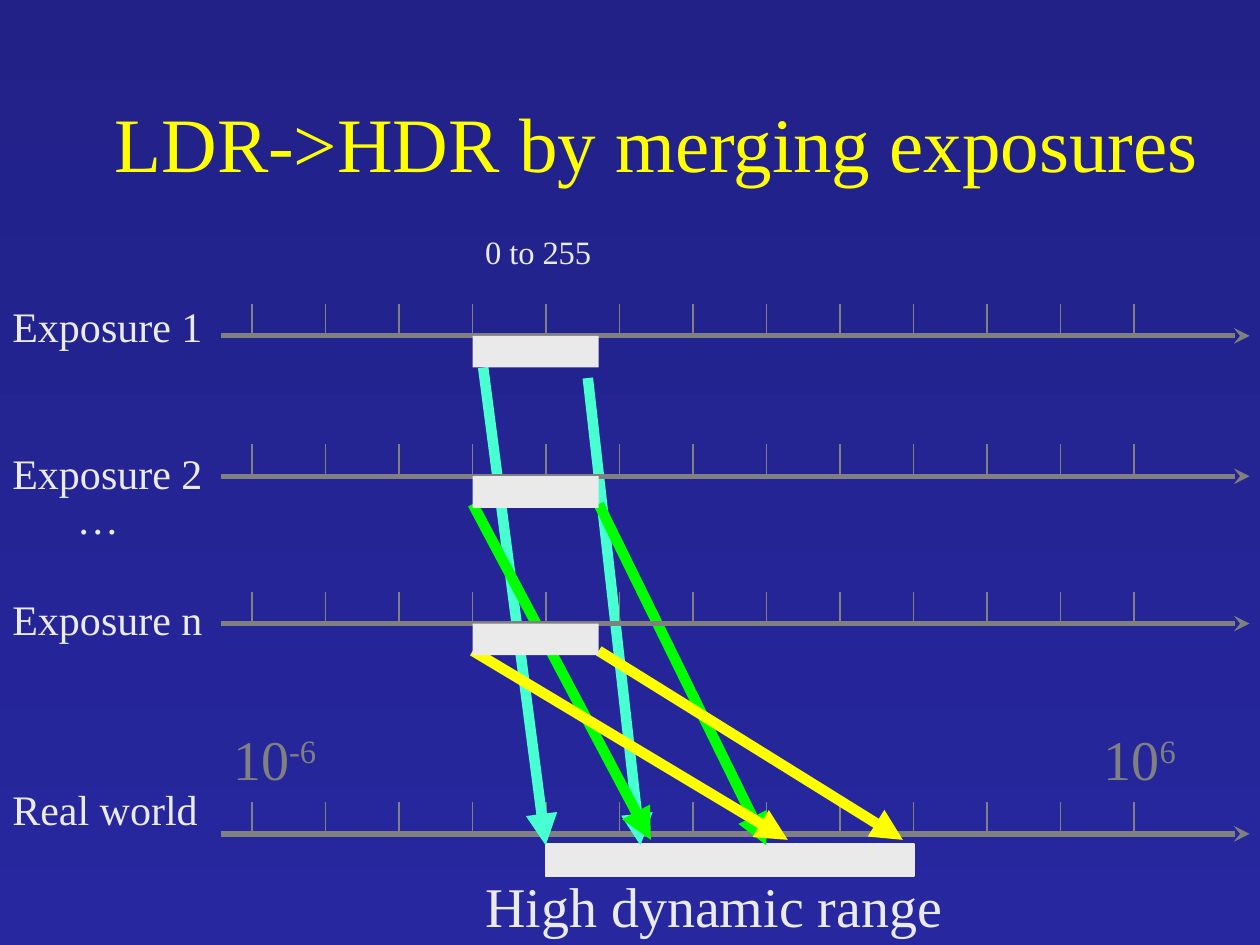
from lxml import etree
from pptx import Presentation
from pptx import util as u
from pptx.dml import color
from pptx.enum import shapes, text
from pptx.oxml import ns

GREY, LIGHT, YELLOW = "808080", "EAEAEA", "FFFF00"
CYAN, GREEN = "47FFD1", "00FF00"
TICK_COUNT, TICK_HEIGHT = 13, 0.64
TICK_FIRST, TICK_LAST = 5.08, 22.86
AXIS_LEFT, AXIS_RIGHT = 4.45, 25.19
RANGE_LEFT, RANGE_WIDTH, RANGE_HEIGHT = 9.53, 2.54, 0.64
WORLD_Y = 16.81


def rgb(value):
    return color.RGBColor.from_string(value)


def add_xml(parent, tag, **attributes):
    return etree.SubElement(parent, ns.qn(tag), attributes)


class Canvas:
    """Holds the text style and the current slide; all lengths are in cm."""

    font_name = "Times New Roman"

    def __init__(self, presentation):
        self.slide = presentation.slides.add_slide(presentation.slide_layouts[6])

    def background(self, top, bottom):
        fill = self.slide.background.fill
        fill.gradient()
        fill.gradient_angle = 270
        for stop, value, position in zip(fill.gradient_stops, (top, bottom), (0, 1)):
            stop.color.rgb = rgb(value)
            stop.position = position

    def text(self, box, parts, size, hex_color=LIGHT, **options):
        """Add one paragraph; each part is (wording, is_superscript)."""
        shape = self.slide.shapes.add_textbox(*map(u.Cm, box))
        formats = {
            "word_wrap": False,
            "auto_size": text.MSO_AUTO_SIZE.NONE,
            "vertical_anchor": text.MSO_ANCHOR.BOTTOM,
            **options,
        }
        for name, value in formats.items():
            setattr(shape.text_frame, name, value)
        paragraph = shape.text_frame.paragraphs[0]
        for wording, superscript in parts:
            run = paragraph.add_run()
            run.text = wording
            for name, value in {"size": u.Pt(size), "name": self.font_name}.items():
                setattr(run.font, name, value)
            run.font.color.rgb = rgb(hex_color)
            if superscript:
                run._r.get_or_add_rPr().set("baseline", "30000")
        return paragraph

    def title(self, box, wording):
        paragraph = self.text(box, [(wording, False)], 44, YELLOW, word_wrap=True,
                              vertical_anchor=text.MSO_ANCHOR.MIDDLE)
        paragraph.alignment = text.PP_ALIGN.CENTER
        properties = paragraph.runs[0]._r.get_or_add_rPr()
        effects = etree.Element(ns.qn("a:effectLst"))
        shadow = add_xml(effects, "a:outerShdw", dist="38100", dir="2700000")
        add_xml(shadow, "a:srgbClr", val="000000")
        properties.find(ns.qn("a:solidFill")).addnext(effects)

    def line(self, start, end, hex_color, width, head=None):
        connector = self.slide.shapes.add_connector(
            shapes.MSO_CONNECTOR.STRAIGHT, *map(u.Cm, (*start, *end)))
        connector.line.color.rgb = rgb(hex_color)
        connector.line.width = u.Pt(width)
        if head:
            add_xml(connector.get_or_add_ln(), "a:tailEnd", type=head)
        add_xml(connector._element.spPr, "a:effectLst")

    def bar(self, box, outlined=False):
        shape = self.slide.shapes.add_shape(
            shapes.MSO_SHAPE.RECTANGLE, *map(u.Cm, box))
        shape.shadow.inherit = False
        shape.fill.solid()
        shape.fill.fore_color.rgb = rgb(LIGHT)
        if outlined:
            shape.line.color.rgb = rgb(LIGHT)
            shape.line.width = u.Pt(1)
        else:
            shape.line.fill.background()

    def axis(self, y):
        step = (TICK_LAST - TICK_FIRST) / (TICK_COUNT - 1)
        for index in range(TICK_COUNT):
            x = TICK_FIRST + index * step
            self.line((x, y - TICK_HEIGHT), (x, y), GREY, 1)
        self.line((AXIS_LEFT, y), (AXIS_RIGHT, y), GREY, 3, "stealth")


def main():
    presentation = Presentation()
    presentation.slide_width, presentation.slide_height = u.Cm(25.4), u.Cm(19.05)
    canvas = Canvas(presentation)
    canvas.background("212188", "27279F")
    canvas.title((1.91, 1.27, 22.66, 3.18), "LDR->HDR by merging exposures")

    canvas.axis(WORLD_Y)
    for left, width, exponent in ((4.45, 2.26, "-6"), (22, 2.01, "6")):
        canvas.text((left, 14.48, width, 1.6), [("10", False), (exponent, True)], 32, GREY)
    canvas.text((0, 15.67, 4.24, 1.27), [("Real world", False)], 24)
    canvas.bar((11, 17.02, 7.42, RANGE_HEIGHT), outlined=True)
    canvas.text((9.53, 17.45, 9.73, 1.6), [("High dynamic range", False)], 32)
    canvas.text((9.53, 4.88, 2.95, 1.14), [("0 to 255", True)], 32)

    # Label, axis height, label top, arrow colour, arrows as (start, end)
    exposures = (
        ("Exposure 1", 6.77, 5.92, CYAN,
         (((11.85, 7.62), (12.91, 17.04)), ((9.74, 7.41), (11, 17.04)))),
        ("Exposure 2", 9.6, 8.89, GREEN,
         (((12.07, 10.16), (15.45, 17.04)), ((9.53, 10.16), (13.12, 16.93)))),
        ("Exposure n", 12.57, 11.84, YELLOW,
         (((9.53, 13.12), (15.88, 16.93)), ((12.07, 13.12), (18.2, 16.93)))),
    )
    for label, y, label_top, hex_color, arrows in exposures:
        canvas.axis(y)
        canvas.text((0, label_top, 4.45, 1.27), [(label, False)], 24, word_wrap=True)
        for start, end in arrows:
            canvas.line(start, end, hex_color, 6, "triangle")
        canvas.bar((RANGE_LEFT, y, RANGE_WIDTH, RANGE_HEIGHT))
    canvas.text((1.3, 9.8, 3.99, 1.27), [("…", False)], 24, word_wrap=True)

    presentation.save("out.pptx")


if __name__ == "__main__":
    main()
